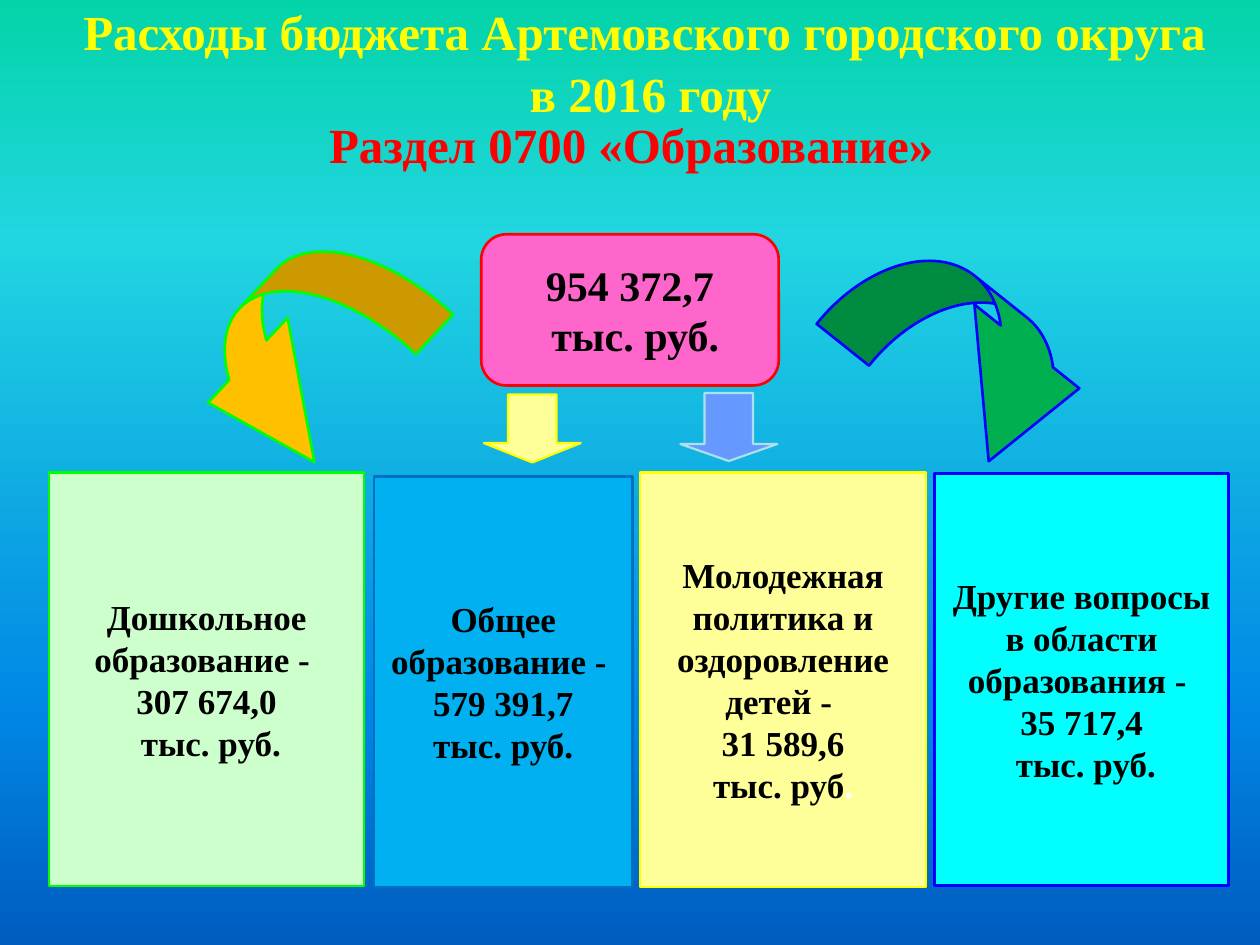
"""Build a slide on the education section of a city district budget for 2016."""
import copy

import pptx
import pptx.dml.color
import pptx.enum.shapes
import pptx.enum.text
import pptx.util

Pt = pptx.util.Pt
RGBColor = pptx.dml.color.RGBColor
SHAPE = pptx.enum.shapes.MSO_SHAPE
ANCHOR = pptx.enum.text.MSO_ANCHOR
CENTER = pptx.enum.text.PP_ALIGN.CENTER

FONT = "Times New Roman"
BLACK = RGBColor(0, 0, 0)
WHITE = RGBColor(255, 255, 255)
YELLOW = RGBColor(255, 255, 0)
PALE_YELLOW = RGBColor(255, 255, 153)
RED = RGBColor(255, 0, 0)
PINK = RGBColor(255, 102, 204)
LIME = RGBColor(0, 255, 0)
PALE_GREEN = RGBColor(204, 255, 204)
GREEN = RGBColor(0, 176, 80)
AMBER = RGBColor(255, 192, 0)
SKY = RGBColor(0, 176, 240)
STEEL = RGBColor(0, 112, 192)
CYAN = RGBColor(0, 255, 255)
BLUE = RGBColor(0, 0, 255)
PERIWINKLE = RGBColor(102, 153, 255)
PALE_BLUE = RGBColor(172, 224, 234)

BACKGROUND = [
    (0, RGBColor(3, 212, 168)),
    (0.25, RGBColor(33, 214, 224)),
    (0.75, RGBColor(0, 135, 230)),
    (1, RGBColor(0, 92, 191)),
]

TITLE = ["Расходы бюджета Артемовского городского округа", " в 2016 году"]
SECTION = "Раздел 0700 «Образование»"
TOTAL = [[("954 372,7", BLACK)], [(" тыс. руб.", BLACK)]]

CARDS = [
    ((28.1, 270, 180, 236.2), PALE_GREEN, LIME,
     [[("Дошкольное образование - ", BLACK)], [("307 674,0", BLACK)],
      [(" тыс. руб.", BLACK)]]),
    ((213.8, 272.2, 147.6, 234.7), SKY, STEEL,
     [[("Общее образование - ", BLACK)], [("579 391,7", BLACK)],
      [("тыс. руб.", BLACK)]]),
    ((365.8, 270, 163.4, 236.9), PALE_YELLOW, YELLOW,
     [[("Молодежная политика и оздоровление детей - ", BLACK)],
      [("31 589,6", BLACK)], [("тыс. руб", BLACK), (".", WHITE)]]),
    ((534.2, 270.7, 167.8, 235.4), CYAN, BLUE,
     [[("Другие вопросы в области образования - ", BLACK)],
      [("35 717,4", BLACK)], [(" тыс. руб.", BLACK)]]),
]

ARROWS = [
    (SHAPE.CURVED_UP_ARROW, (100.1, 157, 149, 91.4), 133.2,
     (0.34, 0.727, 0.74), AMBER, LIME, 1.5),
    (SHAPE.CURVED_DOWN_ARROW, (473, 167, 164.2, 77.8), 38.6,
     (0.492, 0.986, 0.834), GREEN, BLUE, 1.5),
    (SHAPE.DOWN_ARROW, (388.8, 224.6, 55.4, 38.9), 0,
     (0.5, 0.25), PERIWINKLE, PALE_BLUE, 1.25),
    (SHAPE.DOWN_ARROW, (276.5, 225.4, 55.4, 38.9), 0,
     (0.5, 0.285), PALE_YELLOW, YELLOW, 1.25),
]


def paint_background(slide):
    fill = slide.background.fill
    fill.gradient()
    fill.gradient_angle = 270
    stop_list = slide.element.xpath(".//a:gsLst")[0]
    for _ in range(len(BACKGROUND) - len(stop_list)):
        stop_list.append(copy.deepcopy(stop_list[0]))
    for stop, (position, color) in zip(fill.gradient_stops, BACKGROUND):
        stop.position = position
        stop.color.rgb = color


def add_run(paragraph, text, size, color):
    run = paragraph.add_run()
    run.text = text
    run.font.name = FONT
    run.font.size = Pt(size)
    run.font.bold = True
    run.font.color.rgb = color


def add_figure(slide, kind, box, fill, line, width=1.5):
    shape = slide.shapes.add_shape(kind, *map(Pt, box))
    shape.shadow.inherit = False
    shape.fill.solid()
    shape.fill.fore_color.rgb = fill
    shape.line.color.rgb = line
    shape.line.width = Pt(width)
    return shape


def write_lines(shape, lines, size, side_margin, end_margin):
    frame = shape.text_frame
    frame.word_wrap = True
    frame.vertical_anchor = ANCHOR.MIDDLE
    frame.margin_left = frame.margin_right = Pt(side_margin)
    frame.margin_top = frame.margin_bottom = Pt(end_margin)
    for index, runs in enumerate(lines):
        paragraph = frame.add_paragraph() if index else frame.paragraphs[0]
        paragraph.alignment = CENTER
        for text, color in runs:
            add_run(paragraph, text, size, color)


def add_heading(slide, box, lines, color, anchor, spacing, before=0):
    frame = slide.shapes.add_textbox(*map(Pt, box)).text_frame
    frame.word_wrap = True
    frame.vertical_anchor = anchor
    paragraph = frame.paragraphs[0]
    paragraph.alignment = CENTER
    paragraph.line_spacing = spacing
    paragraph.space_before = Pt(before)
    for index, text in enumerate(lines):
        if index:
            paragraph.add_line_break()
        add_run(paragraph, text, 28, color)


def main():
    presentation = pptx.Presentation()
    presentation.slide_width = Pt(720)
    presentation.slide_height = Pt(540)
    slide = presentation.slides.add_slide(presentation.slide_layouts[6])
    paint_background(slide)

    add_heading(slide, (16.6, 11.5, 703.4, 61.9), TITLE, YELLOW, ANCHOR.BOTTOM, 1.05)
    total = add_figure(slide, SHAPE.ROUNDED_RECTANGLE, (275, 133.9, 170, 86.4), PINK, RED)
    write_lines(total, TOTAL, 24, 10, 3.6)

    for box, fill, line, lines in CARDS:
        card = add_figure(slide, SHAPE.RECTANGLE, box, fill, line)
        write_lines(card, lines, 20, 8.6, 0)

    for kind, box, rotation, adjustments, fill, line, width in ARROWS:
        arrow = add_figure(slide, kind, box, fill, line, width)
        arrow.rotation = rotation
        for index, value in enumerate(adjustments):
            arrow.adjustments[index] = value

    add_heading(slide, (36.7, 65.5, 648, 35.3), [SECTION], RED, ANCHOR.TOP, 0.9, 7)
    presentation.save("out.pptx")


if __name__ == "__main__":
    main()
